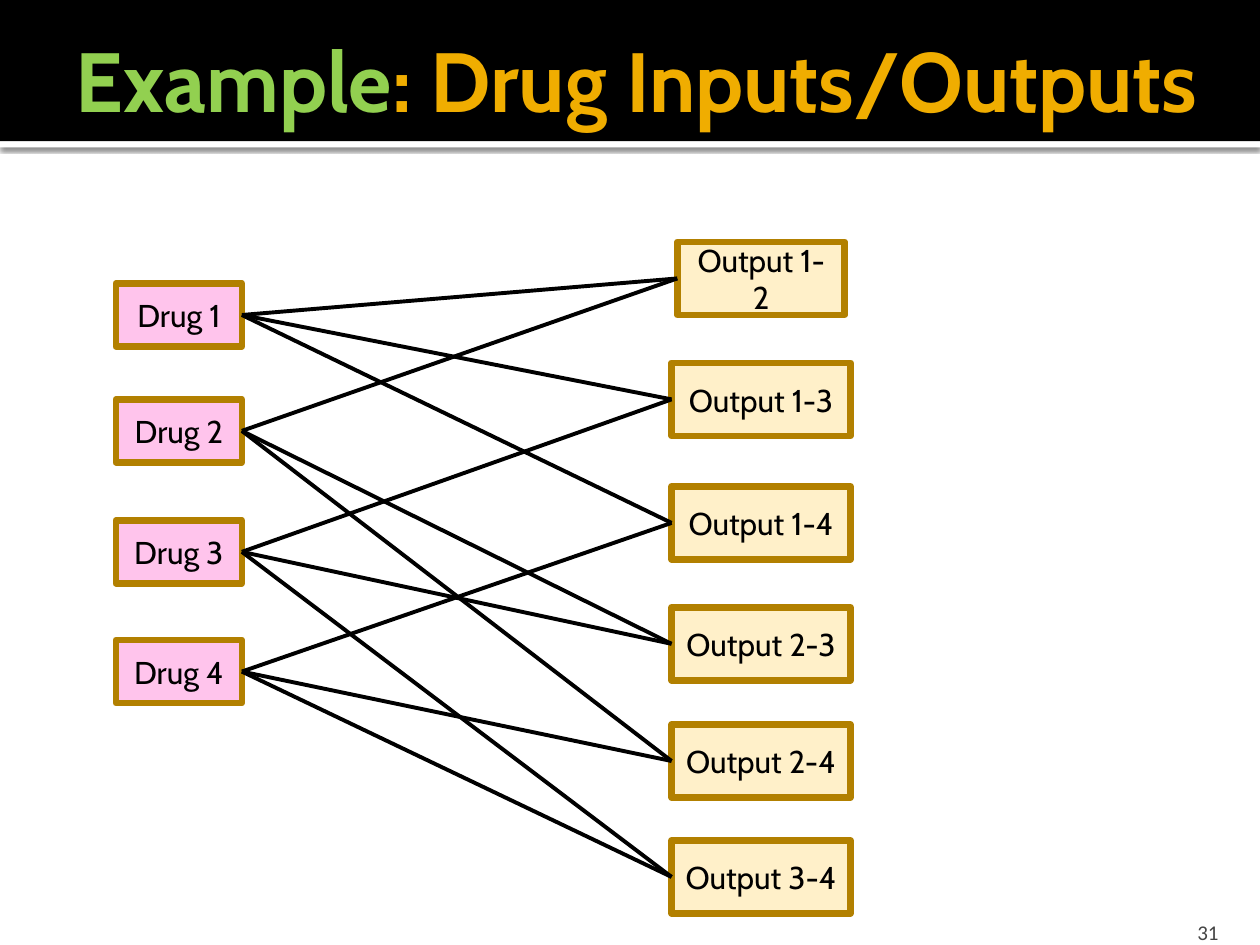
"""Build a slide that links four drugs to the outputs of each pair."""
from itertools import combinations

from lxml.etree import SubElement
from pptx import Presentation
from pptx.dml.color import RGBColor
from pptx.enum.shapes import MSO_CONNECTOR as Connector, MSO_SHAPE as Shape
from pptx.enum.text import MSO_ANCHOR as Anchor, MSO_AUTO_SIZE as AutoSize, PP_ALIGN as Align
from pptx.oxml.ns import qn
from pptx.util import Inches, Pt

BLACK = RGBColor(0x00, 0x00, 0x00)
WHITE = RGBColor(0xFF, 0xFF, 0xFF)
GREEN = RGBColor(0x92, 0xD0, 0x50)
AMBER = RGBColor(0xF0, 0xAD, 0x00)
BROWN = RGBColor(0xB2, 0x80, 0x00)
PINK = RGBColor(0xFF, 0xC4, 0xEC)
CREAM = RGBColor(0xFF, 0xF0, 0xC9)
GRAY = RGBColor(0x45, 0x45, 0x45)

TITLE = [("Example", GREEN), (": Drug Inputs/Outputs", AMBER)]
PAGE_NUMBER = "31"
DRUG_TOPS = {1: 2.25, 2: 3.17, 3: 4.13, 4: 5.08}
OUTPUT_TOPS = [1.92, 2.88, 3.86, 4.82, 5.75, 6.67]
DRUG_LEFT, DRUG_SIZE = 0.92, (1, 0.5)
OUTPUT_CENTER, OUTPUT_HEIGHT = 6.04, 0.58
FIRST_WIDTH, OUTPUT_WIDTH = 1.33, 1.42
RIGHT_SIDE, LEFT_SIDE = 3, 1


def write(box, spans, size=18, font="Cabin", bold=False, align=Align.CENTER,
          anchor=Anchor.MIDDLE, insets=(0.1, 0.05, 0.1, 0.05)):
    frame = box.text_frame
    frame.word_wrap = True
    frame.auto_size = AutoSize.NONE
    frame.vertical_anchor = anchor
    (frame.margin_left, frame.margin_top,
     frame.margin_right, frame.margin_bottom) = map(Inches, insets)
    para = frame.paragraphs[0]
    para.alignment = align
    for text, color in spans:
        span = para.add_run()
        span.text = text
        span.font.size, span.font.name, span.font.bold = Pt(size), font, bold
        span.font.color.rgb = color


def add_box(page, left, top, width, height, fill, line=None):
    box = page.shapes.add_shape(Shape.RECTANGLE, *map(Inches, (left, top, width, height)))
    box.shadow.inherit = False
    box.fill.solid()
    box.fill.fore_color.rgb = fill
    if line is None:
        box.line.fill.background()
    else:
        box.line.color.rgb = line
        box.line.width = Pt(3.78)
    return box


def add_band_shadow(band):
    effects = band.element.spPr.find(qn("a:effectLst"))
    shadow = SubElement(effects, qn("a:outerShdw"), blurRad=str(Pt(2.5)),
                        dist=str(Pt(0.8)), dir="5400000", rotWithShape="0")
    color = SubElement(shadow, qn("a:srgbClr"), val=str(BLACK))
    SubElement(color, qn("a:alpha"), val="60000")


def link(page, drug, output):
    line = page.shapes.add_connector(Connector.STRAIGHT, 0, 0, 0, 0)
    line.begin_connect(drug, RIGHT_SIDE)
    line.end_connect(output, LEFT_SIDE)
    line.line.color.rgb = BLACK
    line.line.width = Pt(2.25)
    SubElement(line.element.spPr, qn("a:effectLst"))


def add_header(page):
    add_band_shadow(add_box(page, 0, 1.12, 10, 0.05, WHITE))
    band = add_box(page, 0, 0, 10, 1.12, BLACK)
    title = page.shapes.title
    band.element.addnext(title.element)
    title.left, title.top, title.width, title.height = map(Inches, (0.5, 0.17, 9.5, 0.92))
    write(title, TITLE, size=48, bold=True, align=Align.LEFT, insets=(0.1, 0.05, 0.05, 0.05))


def add_network(page):
    drugs, outputs = {}, {}
    for number, top in DRUG_TOPS.items():
        drugs[number] = add_box(page, DRUG_LEFT, top, *DRUG_SIZE, PINK, BROWN)
        write(drugs[number], [(f"Drug {number}", BLACK)])
    for pair, top in zip(combinations(drugs, 2), OUTPUT_TOPS):
        width = OUTPUT_WIDTH if outputs else FIRST_WIDTH
        outputs[pair] = add_box(page, OUTPUT_CENTER - width / 2, top, width,
                                OUTPUT_HEIGHT, CREAM, BROWN)
        write(outputs[pair], [(f"Output {pair[0]}-{pair[1]}", BLACK)])
    for pair, output in outputs.items():
        for number in pair:
            link(page, drugs[number], output)


def main():
    deck = Presentation()
    deck.slide_width, deck.slide_height = Inches(10), Inches(7.5)
    page = deck.slides.add_slide(deck.slide_layouts[5])
    add_header(page)
    number = page.shapes.add_textbox(*map(Inches, (8.97, 7.2, 0.8, 0.3)))
    write(number, [(PAGE_NUMBER, GRAY)], size=12, font="Calibri", align=Align.RIGHT,
          anchor=Anchor.BOTTOM, insets=(0.1, 0.05, 0.1, 0))
    add_network(page)
    deck.save("out.pptx")


if __name__ == "__main__":
    main()
